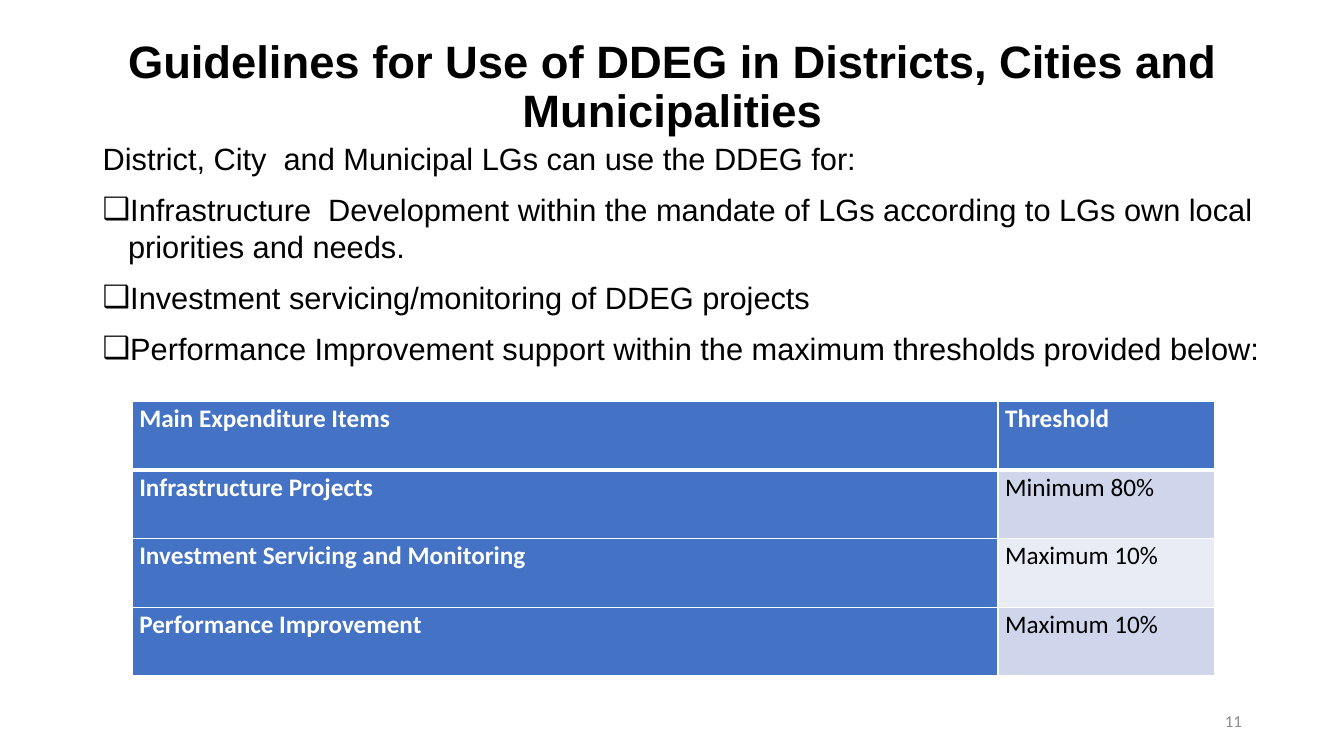
"""Build the slide on DDEG guidelines with its threshold table."""
from lxml import etree
from pptx import Presentation
from pptx import util as u
from pptx.dml.color import RGBColor
from pptx.enum import text
from pptx.oxml.ns import qn

TITLE = "Guidelines for Use of DDEG in Districts, Cities and Municipalities"
INTRO = "District, City  and Municipal LGs can use the DDEG for:"
USES = [
    "Infrastructure  Development within the mandate of LGs according to LGs own local priorities and needs.",
    "Investment servicing/monitoring of DDEG projects",
    "Performance Improvement support within the maximum thresholds provided below:",
]
THRESHOLDS = [
    ("Main Expenditure Items", "Threshold"),
    ("Infrastructure Projects", "Minimum 80%"),
    ("Investment Servicing and Monitoring", "Maximum 10%"),
    ("Performance Improvement", "Maximum 10%"),
]
PAGE = "11"

THEME = {
    "heading": "Arial", "plain": "Calibri",
    "title": 32.4, "body": 22, "table": 18, "page": 12,
    "ink": "000000", "paper": "FFFFFF", "grey": "8C8C8C",
    "accent": "4472C4", "bands": ("E9EBF5", "CFD5EA"),
    "rule": 1, "header_rule": 3,
}
COLUMNS = (21.82, 5.46)
ROW_HEIGHT = 1.73


def style(p, font, size, color, bold=False):
    for r in p.runs:
        r.font.name = font
        r.font.size = u.Pt(size)
        r.font.bold = bold
        r.font.color.rgb = RGBColor.from_string(color)


def add_text(s, box, lines, anchor=text.MSO_ANCHOR.MIDDLE):
    tf = s.shapes.add_textbox(*map(u.Cm, box)).text_frame
    tf.word_wrap = True
    tf.vertical_anchor = anchor
    tf.text = "\n".join(lines)
    return tf.paragraphs


def add_bullet(p):
    pPr = p._p.get_or_add_pPr()
    pPr.set("marL", str(u.Cm(0.64)))
    pPr.set("indent", str(-u.Cm(0.64)))
    etree.SubElement(pPr, qn("a:buFont")).set("typeface", "Arial")
    etree.SubElement(pPr, qn("a:buChar")).set("char", "❑")


def add_borders(cell, row):
    tcPr = cell._tc.get_or_add_tcPr()
    thick = {0: "lnB", 1: "lnT"}.get(row)
    for side in ("lnL", "lnR", "lnT", "lnB"):
        width = THEME["header_rule" if side == thick else "rule"]
        ln = etree.SubElement(tcPr, qn(f"a:{side}"), w=str(u.Pt(width)))
        fill = etree.SubElement(ln, qn("a:solidFill"))
        etree.SubElement(fill, qn("a:srgbClr"), val=THEME["paper"])


def add_thresholds(s):
    size = len(THRESHOLDS), len(COLUMNS)
    box = 3.33, 10.11, sum(COLUMNS), ROW_HEIGHT * len(THRESHOLDS)
    table = s.shapes.add_table(*size, *map(u.Cm, box)).table
    table.first_col = True
    for column, width in zip(table.columns, COLUMNS):
        column.width = u.Cm(width)
    for i, values in enumerate(THRESHOLDS):
        table.rows[i].height = u.Cm(ROW_HEIGHT)
        for j, value in enumerate(values):
            cell = table.cell(i, j)
            strong = i == 0 or j == 0
            cell.margin_left = cell.margin_right = u.Cm(0.18)
            cell.margin_top = cell.margin_bottom = 0
            add_borders(cell, i)
            cell.fill.solid()
            color = THEME["accent"] if strong else THEME["bands"][i % 2]
            cell.fill.fore_color.rgb = RGBColor.from_string(color)
            cell.text_frame.text = value
            p = cell.text_frame.paragraphs[0]
            p.line_spacing = 1.07
            style(p, THEME["plain"], THEME["table"], THEME["paper" if strong else "ink"], strong)


def main():
    prs = Presentation()
    prs.slide_width, prs.slide_height = u.Cm(33.87), u.Cm(19.05)
    s = prs.slides.add_slide(prs.slide_layouts[6])

    p = add_text(s, (2.34, 1.02, 29.21, 2.39), [TITLE])[0]
    p.alignment = text.PP_ALIGN.CENTER
    p.line_spacing = 0.9
    style(p, THEME["heading"], THEME["title"], THEME["ink"], True)

    body = add_text(s, (2.34, 3.4, 30.1, 14.96), [INTRO, *USES], text.MSO_ANCHOR.TOP)
    for p in body:
        p.space_before = u.Pt(10)
        style(p, THEME["heading"], THEME["body"], THEME["ink"])
    for p in body[1:]:
        add_bullet(p)

    add_thresholds(s)

    p = add_text(s, (23.93, 17.65, 7.62, 1.02), [PAGE])[0]
    p.alignment = text.PP_ALIGN.RIGHT
    style(p, THEME["plain"], THEME["page"], THEME["grey"])
    prs.save("out.pptx")


if __name__ == "__main__":
    main()
